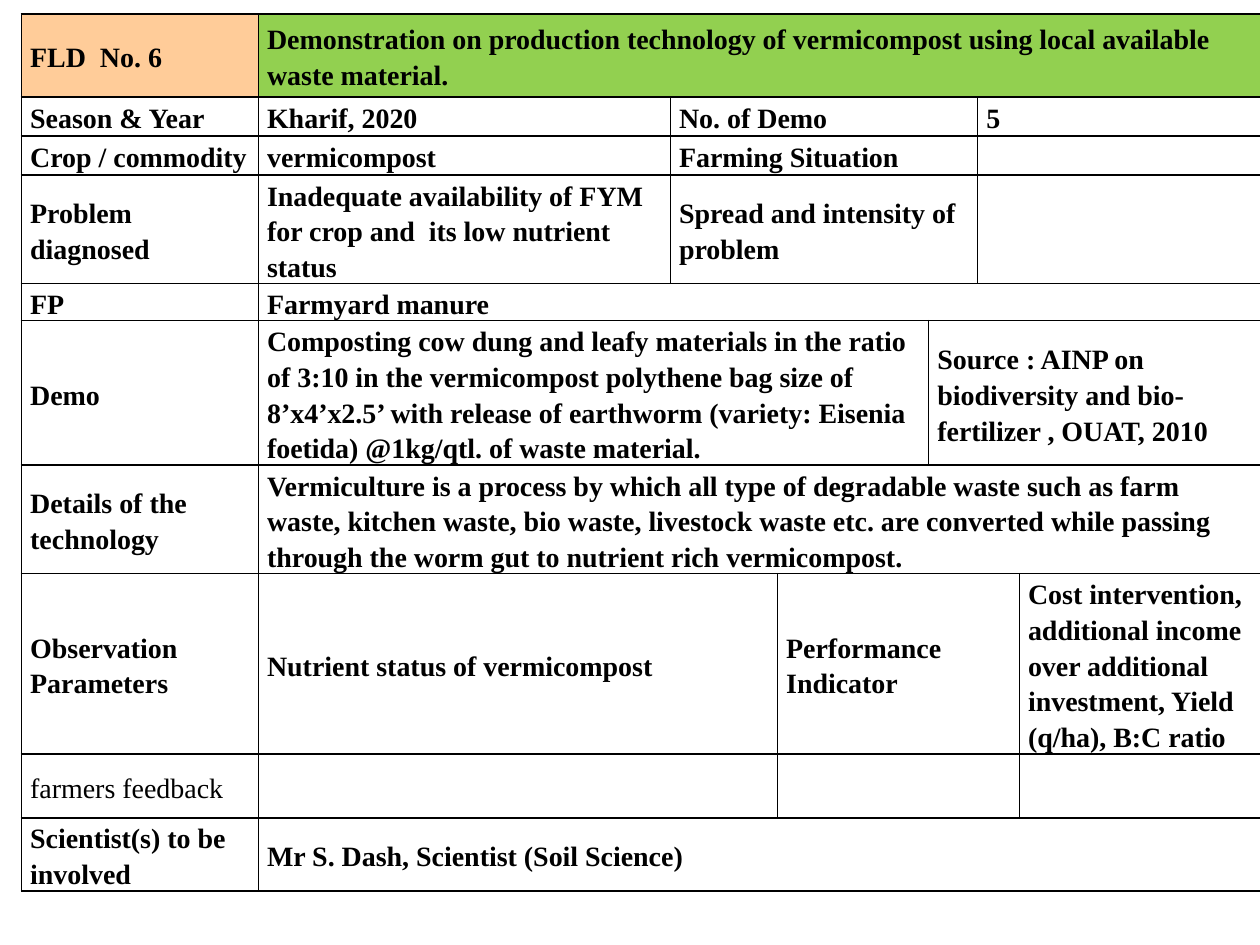
"""Build a one-slide demonstration sheet laid out as a merged table."""
import pptx
import pptx.dml.color
import pptx.enum.text
import pptx.oxml
import pptx.oxml.ns
import pptx.util
from lxml import etree

Inches = pptx.util.Inches
Pt = pptx.util.Pt
qn = pptx.oxml.ns.qn

COLS = [1.88, 3.27, 0.85, 1.2, 0.39, 0.33, 1.92]
ROWS = [
    (0.66, [("FLD  No. 6", 1), ("Demonstration on production technology of vermicompost "
                                "using local available waste material.", 6)]),
    (0.31, [("Season & Year", 1), ("Kharif, 2020", 1), ("No. of Demo", 3), ("5", 2)]),
    (0.31, [("Crop / commodity", 1), ("vermicompost", 1), ("Farming Situation", 3), ("", 2)]),
    (0.75, [("Problem  diagnosed", 1),
            ("Inadequate availability of FYM for crop and  its low nutrient status", 1),
            ("Spread and intensity of problem", 3), ("", 2)]),
    (0.16, [("FP", 1), ("Farmyard manure", 6)]),
    (1.02, [("Demo", 1),
            ("Composting cow dung and leafy materials in the ratio of 3:10 in the "
             "vermicompost polythene bag size of 8’x4’x2.5’ with release of earthworm "
             "(variety: Eisenia foetida) @1kg/qtl. of waste material.", 3),
            ("Source : AINP on biodiversity and bio-fertilizer , OUAT, 2010", 3)]),
    (0.81, [("Details of the technology", 1),
            ("Vermiculture is a process by which all type of degradable waste such as farm "
             "waste, kitchen waste, bio waste, livestock waste etc. are converted while "
             "passing through the worm gut to nutrient rich vermicompost.", 6)]),
    (0.79, [("Observation Parameters", 1), ("Nutrient status of vermicompost", 2),
            ("Performance Indicator", 3),
            ("Cost intervention, additional income over additional investment, "
             "Yield (q/ha), B:C ratio", 1)]),
    (0.51, [("farmers feedback", 1), ("", 2), ("", 3), ("", 1)]),
    (0.51, [("Scientist(s) to be involved", 1), ("Mr S. Dash, Scientist (Soil Science)", 6)]),
]
FILLS = {(0, 0): "FFCC99", (0, 1): "92D050"}
REGULAR = {"farmers feedback"}


def rgb(value):
    """Return a colour from a hex string."""
    return pptx.dml.color.RGBColor.from_string(value)


class Sheet:
    """Hold the text style and the current slide."""

    font, size, ink, line = "Times New Roman", 16, "000000", 1

    def __init__(self, prs):
        """Add a blank slide to the presentation."""
        self.s = prs.slides.add_slide(prs.slide_layouts[6])

    def border(self, cell):
        """Draw a solid line on all four sides of a cell."""
        tc_pr = cell._tc.get_or_add_tcPr()
        for side in ("a:lnL", "a:lnR", "a:lnT", "a:lnB"):
            ln = etree.SubElement(tc_pr, qn(side), w=str(Pt(self.line)))
            fill = etree.SubElement(ln, qn("a:solidFill"))
            etree.SubElement(fill, qn("a:srgbClr"), val=self.ink)

    def cell_text(self, cell, text):
        """Set the text, margins and font of a cell."""
        cell.vertical_anchor = pptx.enum.text.MSO_ANCHOR.MIDDLE
        cell.margin_left = cell.margin_right = Inches(0.07)
        cell.margin_top, cell.margin_bottom = Inches(0.01), 0
        cell.text_frame.text = text
        p = cell.text_frame.paragraphs[0]
        p.line_spacing = 1.15
        for r in p.runs:
            r.font.name, r.font.size = self.font, Pt(self.size)
            r.font.bold = text not in REGULAR
            r.font.color.rgb = rgb(self.ink)
        if not text:
            etree.SubElement(p._p, qn("a:endParaRPr"), sz=str(self.size * 100))

    def table(self, left, top, cols, rows):
        """Add a bordered table whose cells are (text, columns spanned)."""
        height = sum(h for h, _ in rows)
        shape = self.s.shapes.add_table(len(rows), len(cols), Inches(left), Inches(top),
                                        Inches(sum(cols)), Inches(height))
        tbl = shape.table
        tbl.first_row = tbl.horz_banding = False
        for col, width in zip(tbl.columns, cols):
            col.width = Inches(width)
        for i, (height, cells) in enumerate(rows):
            tbl.rows[i].height = Inches(height)
            j = 0
            for text, span in cells:
                cell = tbl.cell(i, j)
                if span > 1:
                    cell.merge(tbl.cell(i, j + span - 1))
                self.cell_text(cell, text)
                for k in range(j, j + span):
                    part = tbl.cell(i, k)
                    self.border(part)
                    if (i, j) in FILLS:
                        part.fill.solid()
                        part.fill.fore_color.rgb = rgb(FILLS[i, j])
                    else:
                        part.fill.background()
                j += span
        return tbl


def main():
    """Build and save the presentation."""
    prs = pptx.Presentation()
    prs.slide_width, prs.slide_height = Inches(10), Inches(7.5)
    tbl = Sheet(prs).table(0.17, 0.11, COLS, ROWS)
    tbl.cell(0, 1).text_frame.paragraphs[0].space_after = Pt(10)
    prs.save("out.pptx")


if __name__ == "__main__":
    main()
